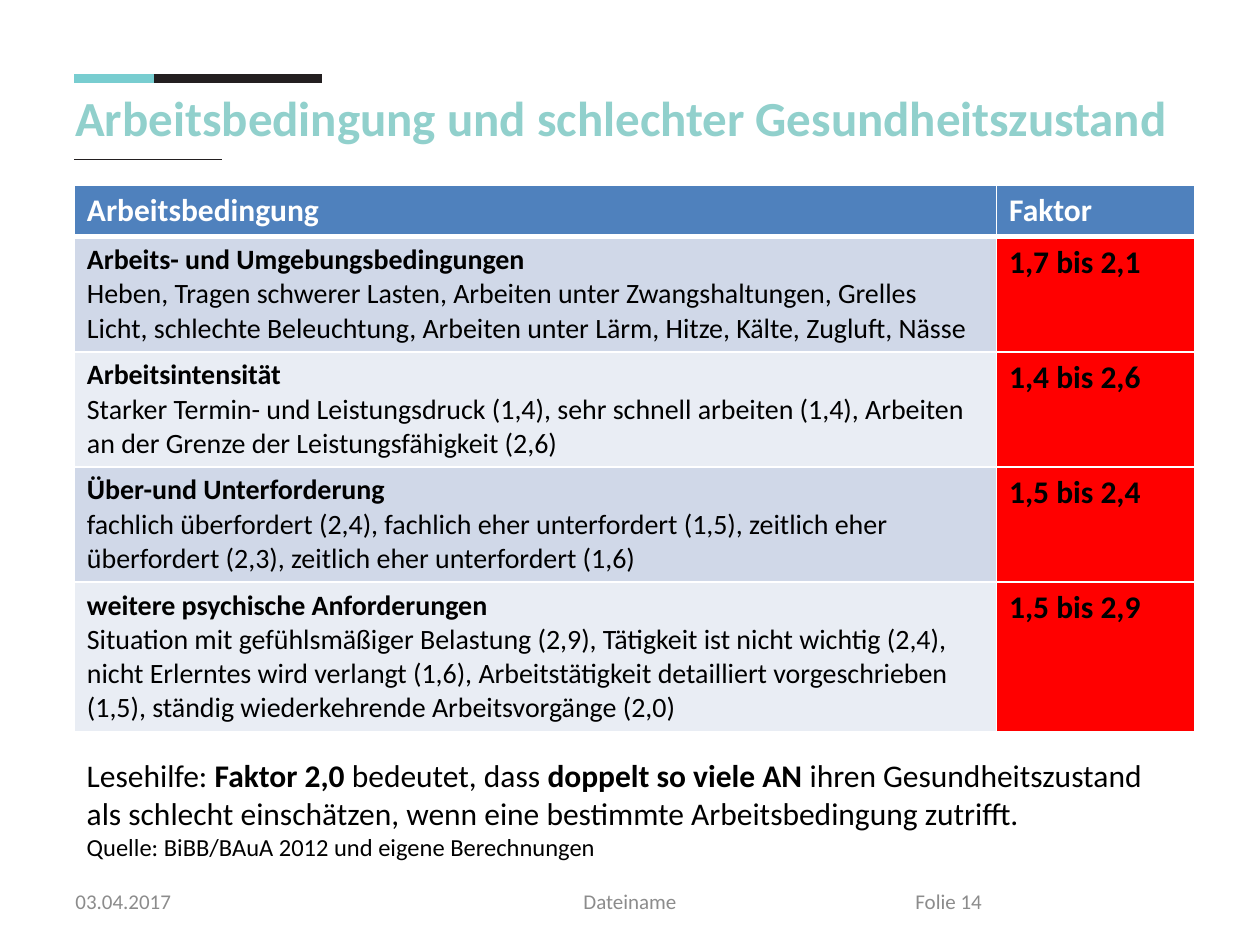
from dataclasses import dataclass

from lxml import etree
from pptx import Presentation, util as u
from pptx.dml.color import RGBColor
from pptx.enum import shapes, text
from pptx.oxml import ns


@dataclass(frozen=True)
class Theme:
    font: str = "Calibri"
    teal: str = "78CDD0"
    dark: str = "231F20"
    title: str = "91D0CC"
    grey: str = "8C8C8C"
    black: str = "000000"
    white: str = "FFFFFF"
    head: str = "4F81BD"
    bands: tuple = ("D0D8E8", "E9EDF4")
    factor: str = "FF0000"
    title_size: int = 28
    large: int = 18
    body: int = 16
    source: int = 14
    small: int = 12


def add_run(p, content, size, color, bold=False, font=Theme.font):
    r = p.add_run()
    r.text = content
    r.font.name, r.font.size, r.font.bold = font, u.Pt(size), bold
    r.font.color.rgb = RGBColor.from_string(color)


def fill_frame(tf, paragraphs):
    for i, runs in enumerate(paragraphs):
        p = tf.paragraphs[0] if i == 0 else tf.add_paragraph()
        for content, fmt in runs:
            add_run(p, content, **fmt)


class SlideBuilder:
    """Holds the theme and the current slide and adds elements in points."""

    def __init__(self, prs, theme):
        self.t = theme
        self.s = prs.slides.add_slide(prs.slide_layouts[6])

    def line(self, x1, x2, y, color, width):
        c = self.s.shapes.add_connector(
            shapes.MSO_CONNECTOR.STRAIGHT, u.Pt(x1), u.Pt(y), u.Pt(x2), u.Pt(y))
        c.line.color.rgb = RGBColor.from_string(color)
        c.line.width = u.Pt(width)
        etree.SubElement(c._element.spPr, ns.qn("a:effectLst"))

    def text(self, x, y, w, h, paragraphs, anchor=text.MSO_ANCHOR.MIDDLE,
             align=text.PP_ALIGN.LEFT):
        tf = self.s.shapes.add_textbox(u.Pt(x), u.Pt(y), u.Pt(w), u.Pt(h)).text_frame
        tf.word_wrap = True
        tf.vertical_anchor = anchor
        fill_frame(tf, paragraphs)
        for p in tf.paragraphs:
            p.alignment = align

    def cell(self, cell, paragraphs, fill, top=1, bottom=1):
        fill_frame(cell.text_frame, paragraphs)
        cell.fill.solid()
        cell.fill.fore_color.rgb = RGBColor.from_string(fill)
        tc_pr = cell._tc.get_or_add_tcPr()
        for i, (side, width) in enumerate(zip("LRTB", (1, 1, top, bottom))):
            ln = etree.Element(ns.qn(f"a:ln{side}"), w=str(u.Pt(width)))
            solid = etree.SubElement(ln, ns.qn("a:solidFill"))
            etree.SubElement(solid, ns.qn("a:srgbClr"), val=self.t.white)
            tc_pr.insert(i, ln)

    def table(self, x, y, widths, heights, header, rows):
        t = self.t
        table = self.s.shapes.add_table(
            len(heights), len(widths), u.Pt(x), u.Pt(y),
            u.Pt(sum(widths)), u.Pt(sum(heights))).table
        for col, width in zip(table.columns, widths):
            col.width = u.Pt(width)
        for row, height in zip(table.rows, heights):
            row.height = u.Pt(height)
        head = dict(size=t.large, color=t.white, bold=True)
        for j, label in enumerate(header):
            self.cell(table.cell(0, j), [[(label, head)]], t.head, bottom=3)
        plain = dict(size=t.body, color=t.black)
        strong = dict(plain, bold=True)
        for i, (name, details, factor) in enumerate(rows, 1):
            top = 3 if i == 1 else 1
            paragraphs = [[(name, strong)]] + [[(d, plain)] for d in details]
            self.cell(table.cell(i, 0), paragraphs, t.bands[(i - 1) % 2], top)
            self.cell(table.cell(i, 1), [[(factor, dict(strong, size=t.large))]],
                      t.factor, top)


ROWS = [
    ("Arbeits- und Umgebungsbedingungen",
     ["Heben, Tragen schwerer Lasten, Arbeiten unter Zwangshaltungen, Grelles Licht, "
      "schlechte Beleuchtung, Arbeiten unter Lärm, Hitze, Kälte, Zugluft, Nässe"],
     "1,7 bis 2,1"),
    ("Arbeitsintensität",
     ["Starker Termin- und Leistungsdruck (1,4), sehr schnell arbeiten (1,4), "
      "Arbeiten an der Grenze der Leistungsfähigkeit (2,6)"],
     "1,4 bis 2,6"),
    ("Über-und Unterforderung",
     ["fachlich überfordert (2,4), fachlich eher unterfordert (1,5), zeitlich eher "
      "überfordert (2,3), zeitlich eher unterfordert (1,6)"],
     "1,5 bis 2,4"),
    ("weitere psychische Anforderungen",
     ["Situation mit gefühlsmäßiger Belastung (2,9), Tätigkeit ist nicht wichtig (2,4),",
      "nicht Erlerntes wird verlangt (1,6), Arbeitstätigkeit detailliert vorgeschrieben "
      "(1,5), ständig wiederkehrende Arbeitsvorgänge (2,0)"],
     "1,5 bis 2,9"),
]


def main():
    prs = Presentation()
    prs.slide_width, prs.slide_height = u.Pt(720), u.Pt(540)
    t = Theme()
    b = SlideBuilder(prs, t)
    left = 42.5

    b.line(left, 88, 45, t.teal, 5)
    b.line(88, 184, 45, t.dark, 5)
    b.line(left, 127, 91.2, t.dark, 0.5)
    b.text(36, 21.6, 648, 90, [[("Arbeitsbedingung und schlechter Gesundheitszustand",
                                dict(size=t.title_size, color=t.title, bold=True))]])

    footer = dict(size=t.small, color=t.grey)
    for x, w, label, align in (
            (36, 168, "03.04.2017", text.PP_ALIGN.LEFT),
            (246, 228, "Dateiname", text.PP_ALIGN.CENTER),
            (516, 168, "Folie 14", text.PP_ALIGN.LEFT)):
        b.text(x, 500.5, w, 28.75, [[(label, footer)]], align=align)

    b.table(left, 105.8, (527, 113.5), (29.5, 65.8, 65.8, 65.8, 85.3),
            ("Arbeitsbedingung", "Faktor"), ROWS)

    note = dict(size=t.large, color=t.black)
    strong = dict(note, bold=True)
    b.text(left, 428.5, 629, 67.5, [
        [("Lesehilfe: ", note), ("Faktor 2,0 ", strong), ("bedeutet, dass ", note),
         ("doppelt so viele AN ", strong),
         ("ihren Gesundheitszustand als schlecht einschätzen, wenn eine bestimmte "
          "Arbeitsbedingung zutrifft.", note)],
        [("Quelle: BiBB/BAuA 2012 und eigene Berechnungen", dict(note, size=t.source))],
    ], anchor=text.MSO_ANCHOR.TOP)

    prs.save("out.pptx")


if __name__ == "__main__":
    main()
